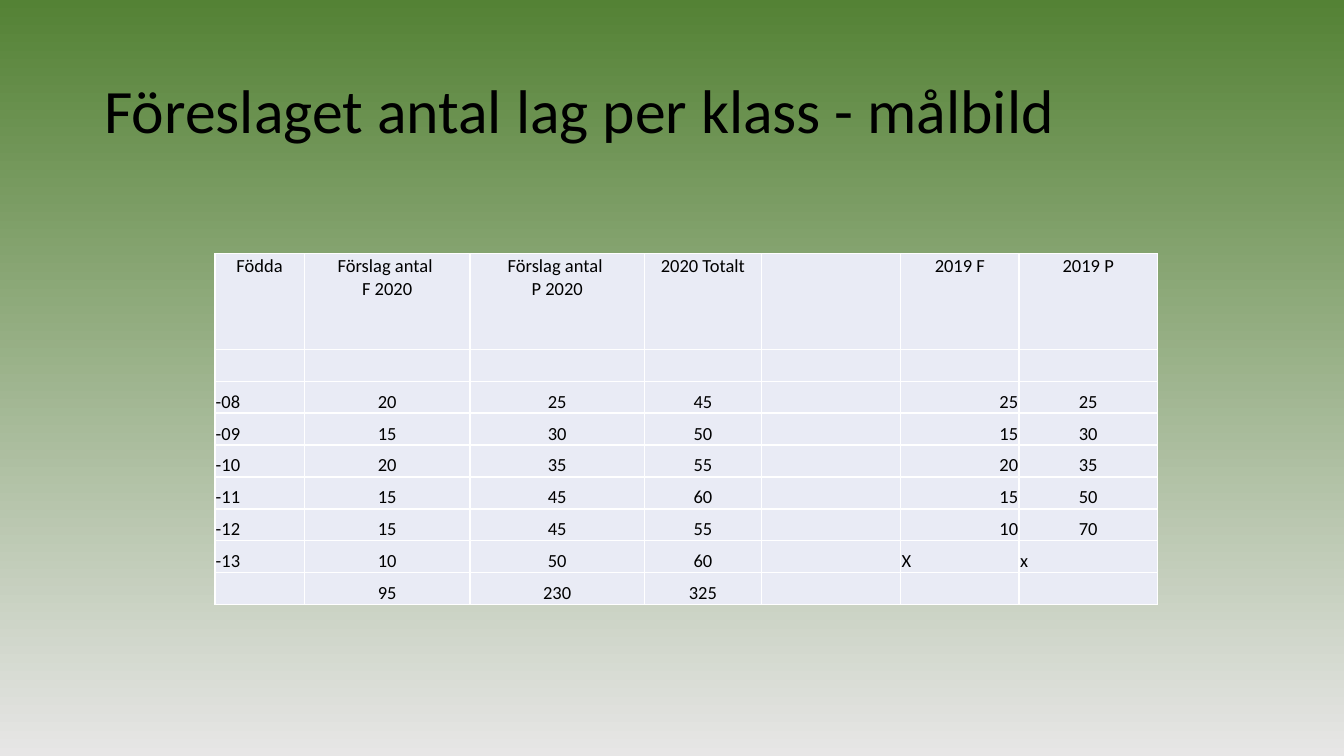
"""Builds the slide with the proposed number of teams per age class."""
from dataclasses import dataclass

from lxml.etree import SubElement
from pptx import Presentation
from pptx.dml.color import RGBColor
from pptx.enum.text import MSO_ANCHOR, MSO_AUTO_SIZE, PP_ALIGN
from pptx.oxml import parse_xml
from pptx.oxml.ns import nsdecls, qn
from pptx.util import Cm, Pt


@dataclass(frozen=True)
class Theme:
    font: str = "Calibri"
    title_size: float = 36.7
    table_size: float = 11
    text: str = "000000"
    cell: str = "E9EBF5"
    border: str = "FFFFFF"
    border_width: float = 1
    background: tuple = ("548235", "E7E6E6")


class TeamSlide:
    def __init__(self, presentation, theme):
        self.theme = theme
        self.slide = presentation.slides.add_slide(presentation.slide_layouts[5])

    def background(self):
        fill = self.slide.background.fill
        fill.gradient()
        fill.gradient_angle = 270
        for stop, color in zip(fill.gradient_stops, self.theme.background):
            stop.color.rgb = RGBColor.from_string(color)

    def style(self, paragraph, size, alignment):
        paragraph.alignment = alignment
        paragraph.font.name = self.theme.font
        paragraph.font.size = Pt(size)
        paragraph.font.color.rgb = RGBColor.from_string(self.theme.text)

    def title(self, text, left, top, width, height):
        heading = self.slide.shapes.title
        heading.left, heading.top = Cm(left), Cm(top)
        heading.width, heading.height = Cm(width), Cm(height)
        frame = heading.text_frame
        frame.text = text
        frame.auto_size = MSO_AUTO_SIZE.NONE
        frame.vertical_anchor = MSO_ANCHOR.MIDDLE
        frame.paragraphs[0].line_spacing = 0.9
        self.style(frame.paragraphs[0], self.theme.title_size, PP_ALIGN.LEFT)

    def table(self, rows, left, top, widths, heights, alignments):
        table = self.slide.shapes.add_table(
            len(rows), len(widths), Cm(left), Cm(top),
            Cm(sum(widths)), Cm(sum(heights))).table
        table.first_row = table.horz_banding = False
        for column, width in zip(table.columns, widths):
            column.width = Cm(width)
        for row, height in zip(table.rows, heights):
            row.height = Cm(height)
        for row_index, values in enumerate(rows):
            is_header = row_index == 0
            for column_index, value in enumerate(values):
                alignment = alignments[column_index]
                if is_header:
                    alignment = PP_ALIGN.CENTER
                elif value.isalpha():
                    alignment = PP_ALIGN.LEFT
                anchor = MSO_ANCHOR.TOP if is_header else MSO_ANCHOR.BOTTOM
                self.cell(table.cell(row_index, column_index), value, alignment, anchor)

    def cell(self, cell, value, alignment, anchor):
        cell.text = value
        cell.vertical_anchor = anchor
        cell.margin_left = cell.margin_right = cell.margin_top = Cm(0.02)
        cell.margin_bottom = Cm(0)
        paragraph = cell.text_frame.paragraphs[0]
        self.style(paragraph, self.theme.table_size, alignment)
        if not value:
            SubElement(paragraph._p, qn("a:endParaRPr"), sz=str(self.theme.table_size * 100))
        self.borders(cell)
        cell.fill.solid()
        cell.fill.fore_color.rgb = RGBColor.from_string(self.theme.cell)

    def borders(self, cell):
        properties = cell._tc.get_or_add_tcPr()
        for side in "LRTB":
            properties.append(parse_xml(
                f'<a:ln{side} {nsdecls("a")} w="{Pt(self.theme.border_width)}">'
                f'<a:solidFill><a:srgbClr val="{self.theme.border}"/></a:solidFill>'
                f'</a:ln{side}>'))


def main():
    presentation = Presentation()
    presentation.slide_width, presentation.slide_height = Cm(28.22), Cm(15.88)
    teams = TeamSlide(presentation, Theme())
    teams.background()
    teams.title("Föreslaget antal lag per klass - målbild", 1.94, 0.84, 24.34, 3.07)
    rows = [
        ("Födda", "Förslag antal \vF 2020", "Förslag antal \vP 2020",
         "2020 Totalt", "", "2019 F", "2019 P"),
        ("",) * 7,
        ("-08", "20", "25", "45", "", "25", "25"),
        ("-09", "15", "30", "50", "", "15", "30"),
        ("-10", "20", "35", "55", "", "20", "35"),
        ("-11", "15", "45", "60", "", "15", "50"),
        ("-12", "15", "45", "55", "", "10", "70"),
        ("-13", "10", "50", "60", "", "X", "x"),
        ("", "95", "230", "325", "", "", ""),
    ]
    teams.table(
        rows, 4.51, 5.33,
        widths=[1.88, 3.48, 3.66, 2.46, 2.92, 2.49, 2.9],
        heights=[2.01] + [0.67] * (len(rows) - 1),
        alignments=[PP_ALIGN.LEFT] + [PP_ALIGN.CENTER] * 4
        + [PP_ALIGN.RIGHT, PP_ALIGN.CENTER])
    presentation.save("out.pptx")


if __name__ == "__main__":
    main()
